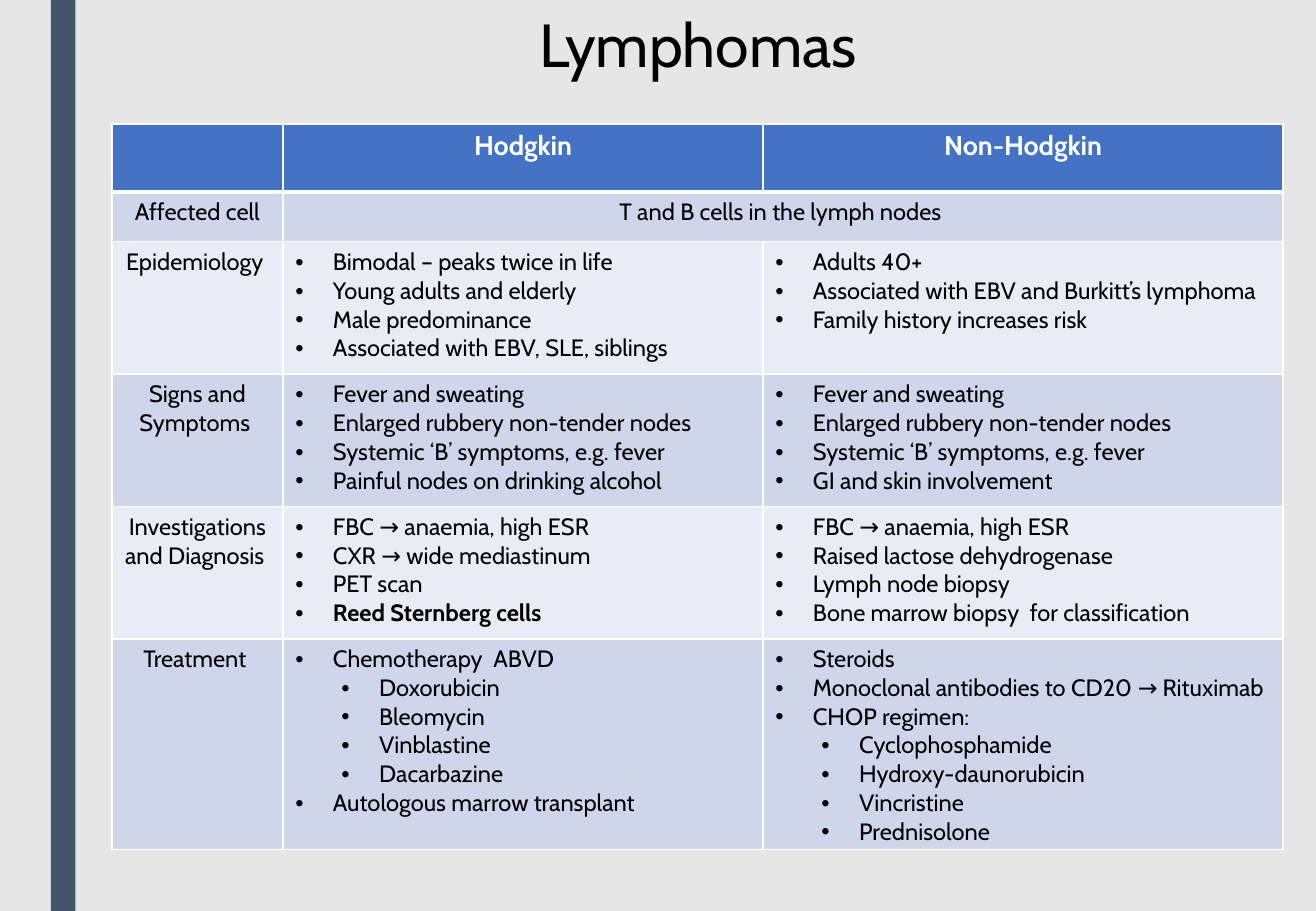
import pptx
import pptx.dml.color
import pptx.enum.shapes
import pptx.enum.text
import pptx.oxml
import pptx.util
from pptx.util import Inches

DRAWING_NAMESPACE = 'xmlns:a="http://schemas.openxmlformats.org/drawingml/2006/main"'
CENTER = pptx.enum.text.PP_ALIGN.CENTER


def color(hex_string):
    return pptx.dml.color.RGBColor.from_string(hex_string)


def write(paragraph, text, size=14, font_color="000000", bold=False, align=None, bullet_level=None):
    """Fill a paragraph with formatted text, bulleted when a level is given."""
    run = paragraph.add_run()
    run.text = text
    run.font.name = "Cabin"
    run.font.size = pptx.util.Pt(size)
    run.font.bold = bold
    run.font.color.rgb = color(font_color)
    paragraph.alignment = align
    if bullet_level is not None:
        paragraph.level = bullet_level
        properties = paragraph._p.get_or_add_pPr()
        properties.set("marL", str(Inches(0.31 + 0.38 * bullet_level)))
        properties.set("indent", str(Inches(-0.31)))
        for bullet_part in ('buFont {} typeface="Arial"', 'buChar {} char="•"'):
            properties.append(pptx.oxml.parse_xml(f"<a:{bullet_part.format(DRAWING_NAMESPACE)}/>"))


presentation = pptx.Presentation()
presentation.slide_width = Inches(10.83)
presentation.slide_height = Inches(7.5)
slide = presentation.slides.add_slide(presentation.slide_layouts[5])
slide.background.fill.solid()
slide.background.fill.fore_color.rgb = color("E7E6E6")

side_bar = slide.shapes.add_shape(
    pptx.enum.shapes.MSO_SHAPE.RECTANGLE, Inches(0.42), 0, Inches(0.2), Inches(7.5))
side_bar.shadow.inherit = False
side_bar.fill.solid()
side_bar.fill.fore_color.rgb = color("44546A")
side_bar.line.fill.background()

title = slide.shapes.title
title.left, title.top, title.width, title.height = Inches(0.66), 0, Inches(10.17), Inches(0.71)
title.text_frame.auto_size = pptx.enum.text.MSO_AUTO_SIZE.SHAPE_TO_FIT_TEXT
write(title.text_frame.paragraphs[0], "Lymphomas", size=36, align=CENTER)

# A list is bulleted; a list inside it holds the second level.
rows = [
    ["", "Hodgkin", "Non-Hodgkin"],
    ["Affected cell", "T and B cells in the lymph nodes ", ""],
    ["Epidemiology ",
     ["Bimodal – peaks twice in life", "Young adults and elderly",
      "Male predominance", "Associated with EBV, SLE, siblings"],
     ["Adults 40+", "Associated with EBV and Burkitt’s lymphoma",
      "Family history increases risk"]],
    ["Signs and Symptoms ",
     ["Fever and sweating", "Enlarged rubbery non-tender nodes",
      "Systemic ‘B’ symptoms, e.g. fever", "Painful nodes on drinking alcohol"],
     ["Fever and sweating", "Enlarged rubbery non-tender nodes",
      "Systemic ‘B’ symptoms, e.g. fever", "GI and skin involvement"]],
    ["Investigations and Diagnosis ",
     ["FBC → anaemia, high ESR", "CXR → wide mediastinum",
      "PET scan", "Reed Sternberg cells"],
     ["FBC → anaemia, high ESR", "Raised lactose dehydrogenase",
      "Lymph node biopsy", "Bone marrow biopsy  for classification"]],
    ["Treatment ",
     ["Chemotherapy  ABVD", ["Doxorubicin", "Bleomycin", "Vinblastine", "Dacarbazine"],
      "Autologous marrow transplant"],
     ["Steroids", "Monoclonal antibodies to CD20 → Rituximab", "CHOP regimen:",
      ["Cyclophosphamide", "Hydroxy-daunorubicin", "Vincristine", "Prednisolone"]]],
]
column_widths = [1.41, 3.95, 4.28]
row_heights = [0.56, 0.41, 1.09, 1.09, 1.09, 1.73]
bold_items = {"Reed Sternberg cells"}

table = slide.shapes.add_table(
    len(rows), len(column_widths), Inches(0.92), Inches(1.02),
    Inches(sum(column_widths)), Inches(sum(row_heights))).table
for column, width in zip(table.columns, column_widths):
    column.width = Inches(width)
for table_row, height in zip(table.rows, row_heights):
    table_row.height = Inches(height)
table.cell(1, 1).merge(table.cell(1, 2))

for row_index, row in enumerate(rows):
    is_header = row_index == 0
    row_fill = "4472C4" if is_header else ("E9EBF5", "CFD5EA")[row_index % 2]
    for column_index, content in enumerate(row):
        cell = table.cell(row_index, column_index)
        cell.margin_left = cell.margin_right = Inches(0.1)
        cell.margin_top = cell.margin_bottom = Inches(0.05)
        for side in "LRTB":
            under_header = (row_index, side) in [(0, "B"), (1, "T")]
            line_width = pptx.util.Pt(3 if under_header else 1)
            cell._tc.get_or_add_tcPr().append(pptx.oxml.parse_xml(
                f'<a:ln{side} {DRAWING_NAMESPACE} w="{line_width}">'
                '<a:solidFill><a:srgbClr val="FFFFFF"/></a:solidFill>'
                f'</a:ln{side}>'))
        cell.fill.solid()
        cell.fill.fore_color.rgb = color(row_fill)

        first_paragraph = cell.text_frame.paragraphs[0]
        if isinstance(content, list):
            bullets = []
            for item in content:
                if isinstance(item, list):
                    bullets += [(text, 1) for text in item]
                else:
                    bullets.append((item, 0))
            for index, (text, level) in enumerate(bullets):
                paragraph = cell.text_frame.add_paragraph() if index else first_paragraph
                write(paragraph, text, bold=text in bold_items, bullet_level=level)
        elif is_header and content:
            write(first_paragraph, content, size=16, font_color="FFFFFF", bold=True, align=CENTER)
        elif content:
            write(first_paragraph, content, align=CENTER)

presentation.save("out.pptx")
